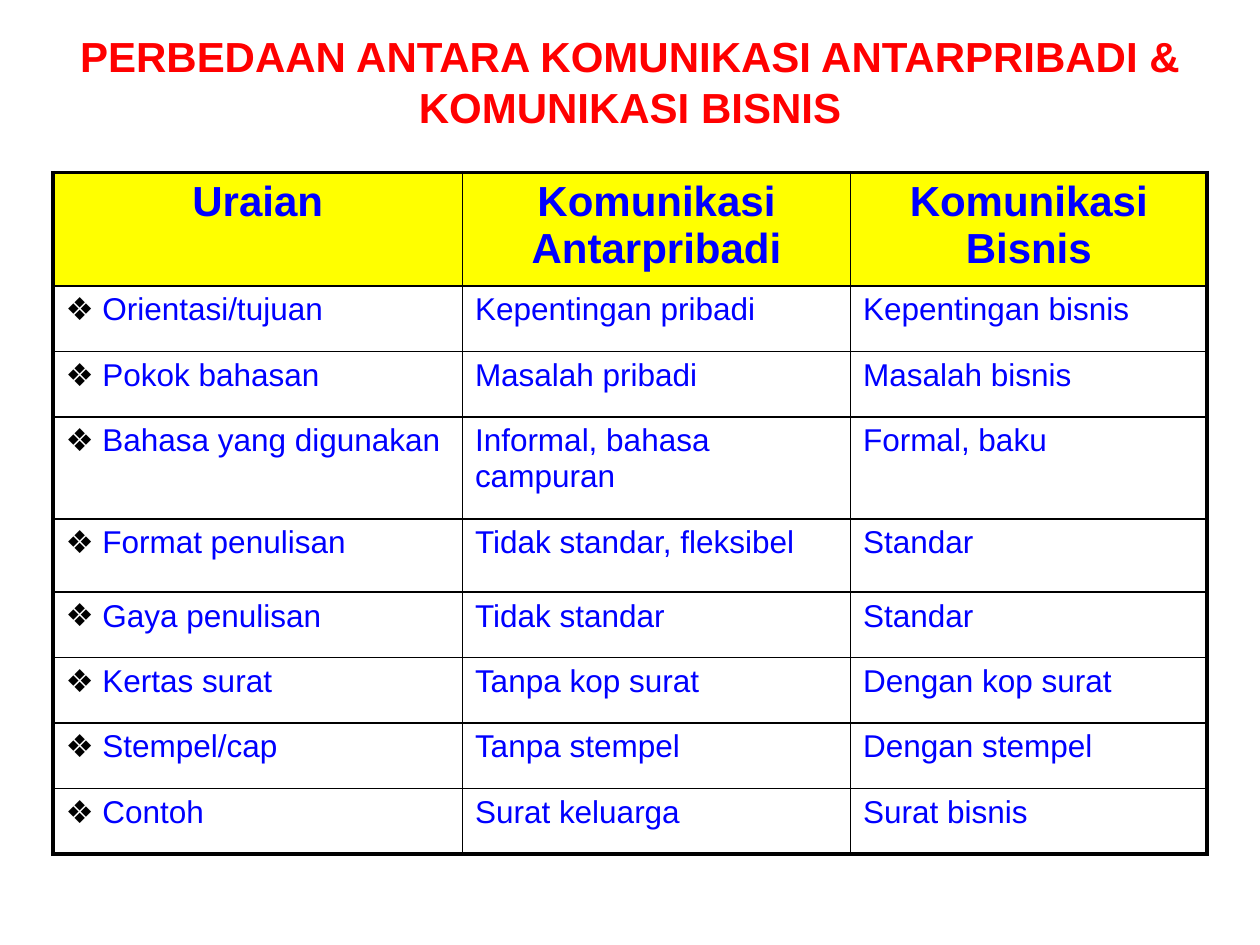
from lxml.etree import SubElement
from pptx import Presentation
from pptx.dml.color import RGBColor
from pptx.enum.text import MSO_ANCHOR, PP_ALIGN
from pptx.oxml.ns import qn
from pptx.util import Inches, Pt

TITLE = "PERBEDAAN ANTARA KOMUNIKASI ANTARPRIBADI & KOMUNIKASI BISNIS"
ROWS = [
    ("Uraian", "Komunikasi Antarpribadi", "Komunikasi\nBisnis"),
    ("Orientasi/tujuan", "Kepentingan pribadi", "Kepentingan bisnis"),
    ("Pokok bahasan", "Masalah pribadi", "Masalah bisnis"),
    ("Bahasa yang digunakan", "Informal, bahasa campuran", "Formal, baku"),
    ("Format penulisan", "Tidak standar, fleksibel", "Standar"),
    ("Gaya penulisan", "Tidak standar", "Standar"),
    ("Kertas surat", "Tanpa kop surat", "Dengan kop surat"),
    ("Stempel/cap", "Tanpa stempel", "Dengan stempel"),
    ("Contoh", "Surat keluarga", "Surat bisnis"),
]
COLUMN_WIDTHS = [3.25, 3.08, 2.83]
ROW_HEIGHT = 0.52
SPECIAL_HEIGHTS = {0: 0.9, 3: 0.81, 4: 0.58}
COLORS = {"title": "FF0000", "text": "0000FF", "header": "FFFF00", "line": "000000"}
FONT = "Arial"
BULLET = "❖"
INNER_LINE, OUTER_LINE = 1, 2.25


def style_text(frame, size, color, bold, align):
    for para in frame.paragraphs:
        para.alignment = align
        for span in para.runs:
            span.font.name = FONT
            span.font.size = Pt(size)
            span.font.bold = bold
            span.font.color.rgb = RGBColor.from_string(COLORS[color])


def add_color(parent, color):
    SubElement(parent, qn("a:srgbClr"), val=COLORS[color])


def add_borders(cell, outer_sides):
    properties = cell._tc.get_or_add_tcPr()
    for side in "LRTB":
        width = OUTER_LINE if side in outer_sides else INNER_LINE
        line = SubElement(properties, qn(f"a:ln{side}"), w=str(Pt(width)))
        add_color(SubElement(line, qn("a:solidFill")), "line")


def add_bullet(para):
    properties = para._p.get_or_add_pPr()
    properties.set("marL", "0")
    properties.set("indent", "0")
    add_color(SubElement(properties, qn("a:buClr")), "line")
    SubElement(properties, qn("a:buFont"), typeface=FONT)
    SubElement(properties, qn("a:buChar"), char=BULLET)


def fill_cell(cell, text, row, column):
    is_header, is_label = row == 0, row > 0 and column == 0
    edges = {"T": is_header, "B": row == len(ROWS) - 1,
             "L": column == 0, "R": column == len(COLUMN_WIDTHS) - 1}
    add_borders(cell, [side for side, is_edge in edges.items() if is_edge])
    if is_header:
        cell.fill.solid()
        cell.fill.fore_color.rgb = RGBColor.from_string(COLORS["header"])
    else:
        cell.fill.background()
    cell.text_frame.text = f" {text}" if is_label else text
    style_text(cell.text_frame, 24 if is_header else 18, "text", is_header,
               PP_ALIGN.CENTER if is_header else PP_ALIGN.LEFT)
    if is_label:
        add_bullet(cell.text_frame.paragraphs[0])


def add_title(page):
    box = page.shapes.add_textbox(Inches(0.5), Inches(0.17), Inches(9), Inches(0.95))
    frame = box.text_frame
    frame.word_wrap = True
    frame.vertical_anchor = MSO_ANCHOR.MIDDLE
    frame.text = TITLE
    style_text(frame, 24, "title", True, PP_ALIGN.CENTER)


def add_comparison(page):
    heights = [SPECIAL_HEIGHTS.get(row, ROW_HEIGHT) for row in range(len(ROWS))]
    table = page.shapes.add_table(
        len(ROWS), len(COLUMN_WIDTHS), Inches(0.42), Inches(1.37),
        Inches(sum(COLUMN_WIDTHS)), Inches(sum(heights))).table
    table.first_row = table.horz_banding = False
    for column, width in zip(table.columns, COLUMN_WIDTHS):
        column.width = Inches(width)
    for row, (texts, height) in enumerate(zip(ROWS, heights)):
        table.rows[row].height = Inches(height)
        for column, text in enumerate(texts):
            fill_cell(table.cell(row, column), text, row, column)


def main():
    """Build the slide comparing interpersonal and business communication."""
    deck = Presentation()
    deck.slide_width, deck.slide_height = Inches(10), Inches(7.5)
    page = deck.slides.add_slide(deck.slide_layouts[6])
    add_title(page)
    add_comparison(page)
    deck.save("out.pptx")


if __name__ == "__main__":
    main()
